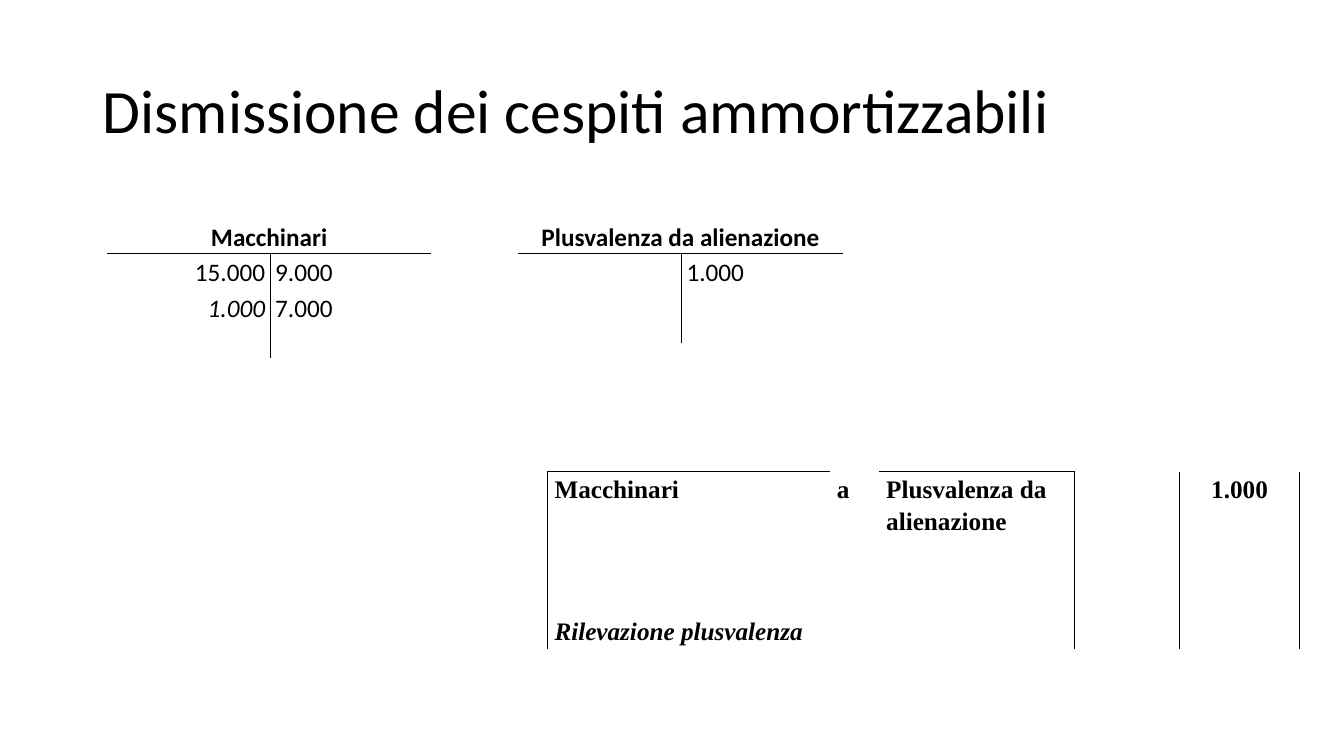
from lxml.etree import SubElement
from pptx import Presentation
from pptx.dml.color import RGBColor
from pptx.enum.text import MSO_ANCHOR, MSO_AUTO_SIZE, PP_ALIGN
from pptx.oxml.ns import qn
from pptx.util import Inches, Pt

COLORS = {"ink": "000000", "page": "FFFFFF"}
PLAIN_STYLE = "{2D5ABB26-0587-4C30-8999-92F81FD0307C}"
ALIGNMENTS = {"left": PP_ALIGN.LEFT, "center": PP_ALIGN.CENTER, "right": PP_ALIGN.RIGHT}


def add_plain_table(page, left, top, widths, heights, borders, inset):
    frame = page.shapes.add_table(
        len(heights), len(widths), Inches(left), Inches(top),
        Inches(sum(widths)), Inches(sum(heights)))
    table = frame.table
    table.first_row = table.horz_banding = False
    table._tbl.tblPr.find(qn("a:tableStyleId")).text = PLAIN_STYLE
    for column, width in zip(table.columns, widths):
        column.width = Inches(width)
    for row_index, (row, height) in enumerate(zip(table.rows, heights)):
        row.height = Inches(height)
        for column_index, cell in enumerate(row.cells):
            margins = {"margin_left": inset, "margin_right": inset,
                       "margin_top": 0, "margin_bottom": 0}
            for name, value in margins.items():
                setattr(cell, name, Inches(value))
            for side in borders[row_index][column_index]:
                line = SubElement(cell._tc.get_or_add_tcPr(), qn("a:ln" + side), w=str(Pt(1)))
                fill = SubElement(line, qn("a:solidFill"))
                SubElement(fill, qn("a:srgbClr"), val=COLORS["ink"])
            cell.fill.background()
    return table


def write_cell(cell, lines, font, align="left"):
    for index, (text, style) in enumerate(lines):
        frame = cell.text_frame
        para = frame.paragraphs[0] if index == 0 else frame.add_paragraph()
        para.alignment = ALIGNMENTS[align]
        para.line_spacing = 1.15
        span = para.add_run()
        span.text = text
        formats = {"name": font, "size": Pt(18), "bold": "b" in style, "italic": "i" in style}
        for name, value in formats.items():
            setattr(span.font, name, value)
        span.font.color.rgb = RGBColor.from_string(COLORS["ink"])


deck = Presentation()
deck.slide_width, deck.slide_height = Inches(13.33), Inches(7.5)
page = deck.slides.add_slide(deck.slide_layouts[5])
page.background.fill.solid()
page.background.fill.fore_color.rgb = RGBColor.from_string(COLORS["page"])

title = page.shapes.title
place = {"left": 0.92, "top": 0.4, "width": 11.5, "height": 1.45}
for name, value in place.items():
    setattr(title, name, Inches(value))
title.text_frame.text = "Dismissione dei cespiti ammortizzabili"
title.text_frame.vertical_anchor = MSO_ANCHOR.MIDDLE
title.text_frame.auto_size = MSO_AUTO_SIZE.NONE
para = title.text_frame.paragraphs[0]
para.alignment = PP_ALIGN.LEFT
para.line_spacing = 0.9
para.font.name, para.font.size = "Calibri", Pt(44)
para.font.color.rgb = RGBColor.from_string(COLORS["ink"])

accounts = [
    (1.06, 1.04, "Macchinari", [("15.000", ""), ("1.000", "i")], [("9.000", ""), ("7.000", "")]),
    (5.14, 0.89, "Plusvalenza da alienazione", [], [("1.000", "")]),
]
for left, depth, name, debits, credits in accounts:
    account = add_plain_table(page, left, 2.16, [1.62, 1.6], [0.35, depth],
                              [["B", "B"], ["RT", "LT"]], 0.05)
    account.cell(0, 0).merge(account.cell(0, 1))
    write_cell(account.cell(0, 0), [(name, "b")], "Calibri", "center")
    write_cell(account.cell(1, 0), debits, "Calibri", "right")
    write_cell(account.cell(1, 1), credits, "Calibri")

entry_borders = [["LT", "", "RT", "R", "LR"]] + [["LR", "", "R", "R", "LR"]] * 2
journal = add_plain_table(page, 5.43, 4.68, [2.8, 0.49, 1.94, 1.04, 1.19],
                          [1.1, 0.3, 0.35], entry_borders, 0.07)
for row_index in (1, 2):
    journal.cell(row_index, 0).merge(journal.cell(row_index, 2))
entries = [
    (0, 0, "Macchinari", "b", "left"),
    (0, 1, "a", "b", "left"),
    (0, 2, "Plusvalenza da alienazione", "b", "left"),
    (0, 4, "1.000", "b", "center"),
    (2, 0, "Rilevazione plusvalenza", "bi", "left"),
]
for row_index, column_index, text, style, align in entries:
    write_cell(journal.cell(row_index, column_index), [(text, style)], "Times New Roman", align)

deck.save("out.pptx")
